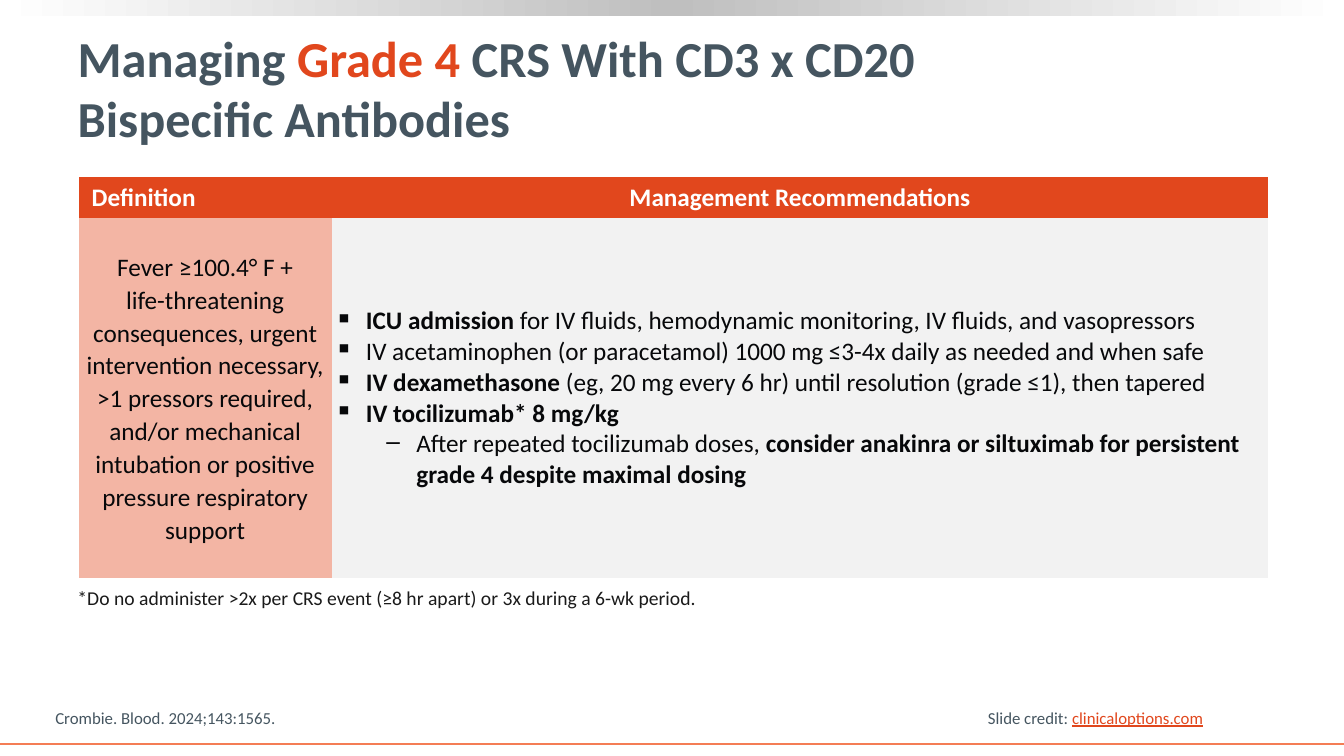
from copy import deepcopy
from dataclasses import dataclass

from lxml import etree
from pptx import Presentation
from pptx.dml.color import RGBColor
from pptx.enum.shapes import MSO_CONNECTOR, MSO_SHAPE
from pptx.enum.text import MSO_ANCHOR, PP_ALIGN
from pptx.oxml.ns import qn
from pptx.util import Inches, Pt

LEFT, CENTER = PP_ALIGN.LEFT, PP_ALIGN.CENTER
TOP, MIDDLE, BOTTOM = MSO_ANCHOR.TOP, MSO_ANCHOR.MIDDLE, MSO_ANCHOR.BOTTOM
RECTANGLE, STRAIGHT = MSO_SHAPE.RECTANGLE, MSO_CONNECTOR.STRAIGHT
TITLE_ONLY = 5
NO_STYLE_NO_GRID = "{2D5ABB26-0587-4C30-8999-92F81FD0307C}"


@dataclass(frozen=True)
class Theme:
    font: str = "Calibri"
    slate: str = "455560"
    accent: str = "E1471D"
    rule: str = "F47D55"
    white: str = "FFFFFF"
    silver: str = "BFBFBF"
    ink: str = "07080A"
    note: str = "1A1A1A"
    definition_fill: str = "F3B5A4"
    advice_fill: str = "F2F2F2"
    title_pt: int = 36
    table_pt: int = 18
    note_pt: int = 14
    footer_pt: int = 12


THEME = Theme()


@dataclass(frozen=True)
class Span:
    text: str
    color: str
    bold: bool = False
    underline: bool = False


@dataclass(frozen=True)
class Para:
    spans: tuple[Span, ...]
    align: PP_ALIGN = LEFT
    line_spacing: float = 1.0
    bullet: str = ""
    indent: float = 0
    level: int = 0


@dataclass(frozen=True)
class Cell:
    paras: tuple[Para, ...]
    fill: str
    inset_x: float
    inset_y: float


@dataclass(frozen=True)
class Label:
    spans: tuple[Span, ...]
    box: tuple[float, float, float, float]
    size: int
    anchor: MSO_ANCHOR = TOP
    wrap: bool = True


def header(text: str, align: PP_ALIGN) -> Cell:
    return Cell((Para((Span(text, THEME.white, True),), align),), THEME.accent, 0.13, 0.05)


def definition(text: str) -> Para:
    return Para((Span(text, THEME.ink),), CENTER, 1.07)


def advice(*parts: tuple[str, bool], bullet: str = "▪", indent: float = 0.31,
           level: int = 0) -> Para:
    spans = tuple(Span(text, THEME.ink, bold) for text, bold in parts)
    return Para(spans, bullet=bullet, indent=indent, level=level)


TITLE = (
    (Span("Managing ", THEME.slate, True), Span("Grade 4", THEME.accent, True),
     Span(" CRS With CD3 x CD20 ", THEME.slate, True)),
    (Span("Bispecific Antibodies", THEME.slate, True),),
)

COLUMNS = (2.51, 9.29)
ROWS = (0.4, 3.57)
CELLS = (
    (header("Definition", LEFT), header("Management Recommendations", CENTER)),
    (
        Cell((
            definition("Fever ≥100.4° F +"),
            definition("life-threatening consequences, urgent intervention necessary, "
                       ">1 pressors required, and/or mechanical intubation or positive "
                       "pressure respiratory support"),
        ), THEME.definition_fill, 0.03, 0),
        Cell((
            advice(("ICU admission ", True),
                   ("for IV fluids, hemodynamic monitoring, IV fluids, and vasopressors", False)),
            advice(("IV acetaminophen (or paracetamol) 1000 mg ≤3-4x daily as needed "
                    "and when safe", False)),
            advice(("IV dexamethasone ", True),
                   ("(eg, 20 mg every 6 hr) until resolution (grade ≤1), then tapered", False)),
            advice(("IV tocilizumab* 8 mg/kg", True)),
            advice(("After repeated tocilizumab doses, ", False),
                   ("consider anakinra or siltuximab for persistent grade 4 despite "
                    "maximal dosing", True), bullet="‒", indent=0.81, level=1),
        ), THEME.advice_fill, 0.03, 0),
    ),
)

LABELS = (
    Label((Span("*Do no administer >2x per CRS event (≥8 hr apart) or 3x during a 6-wk period.",
                THEME.note),), (0.67, 5.76, 11.6, 0.34), THEME.note_pt),
    Label((Span("Crombie. Blood. 2024;143:1565.", THEME.slate),),
          (0.45, 6.97, 8.59, 0.3), THEME.footer_pt, BOTTOM),
    Label((Span("Slide credit: ", THEME.slate),
           Span("clinicaloptions.com", THEME.accent, underline=True)),
          (9.7, 6.97, 2.36, 0.3), THEME.footer_pt, wrap=False),
)


def rgb(color: str) -> RGBColor:
    return RGBColor.from_string(color)


def add_spans(p, spans: tuple[Span, ...], size: int) -> None:
    for span in spans:
        r = p.add_run()
        r.text = span.text
        r.font.name, r.font.size = THEME.font, Pt(size)
        r.font.bold, r.font.underline = span.bold, span.underline
        r.font.color.rgb = rgb(span.color)


def add_bullet(p, para: Para) -> None:
    pPr = p._p.get_or_add_pPr()
    pPr.set("marL", str(Inches(para.indent)))
    pPr.set("indent", str(Inches(-0.31)))
    etree.SubElement(pPr, qn("a:buChar")).set("char", para.bullet)


def add_top_band(slide) -> None:
    """Draw the strip that fades from white to silver and back."""
    sp = slide.shapes.add_shape(RECTANGLE, 0, 0, Inches(13.33), Inches(0.16))
    sp.shadow.inherit = False
    sp.line.fill.background()
    sp.fill.gradient()
    sp.fill.gradient_angle = 0
    stops = sp._element.spPr.find(qn("a:gradFill")).find(qn("a:gsLst"))
    stops.append(deepcopy(stops[0]))
    colors = (THEME.white, THEME.silver, THEME.white)
    for stop, color, position in zip(sp.fill.gradient_stops, colors, (0, 0.5, 1)):
        stop.color.rgb = rgb(color)
        stop.position = position


def add_bottom_rule(slide) -> None:
    y = Inches(7.38)
    line = slide.shapes.add_connector(STRAIGHT, 0, y, Inches(13.33), y)
    line.line.color.rgb = rgb(THEME.rule)
    line.line.width = Pt(1.5)
    etree.SubElement(line._element.spPr, qn("a:effectLst"))


def add_title(slide) -> None:
    sp = slide.shapes.title
    sp.left, sp.top, sp.width, sp.height = map(Inches, (0.67, 0.26, 11.89, 1.21))
    tf = sp.text_frame
    tf.vertical_anchor = MIDDLE
    p = tf.paragraphs[0]
    p.alignment = LEFT
    for i, spans in enumerate(TITLE):
        if i:
            p.add_line_break()
        add_spans(p, spans, THEME.title_pt)


def fill_cell(target, cell: Cell) -> None:
    target.fill.solid()
    target.fill.fore_color.rgb = rgb(cell.fill)
    target.vertical_anchor = MIDDLE
    target.margin_left = target.margin_right = Inches(cell.inset_x)
    target.margin_top = target.margin_bottom = Inches(cell.inset_y)
    tf = target.text_frame
    for i, para in enumerate(cell.paras):
        p = tf.add_paragraph() if i else tf.paragraphs[0]
        p.alignment, p.level = para.align, para.level
        p.line_spacing = para.line_spacing
        if para.bullet:
            add_bullet(p, para)
        add_spans(p, para.spans, THEME.table_pt)


def add_management_table(slide) -> None:
    box = map(Inches, (0.78, 1.76, sum(COLUMNS), sum(ROWS)))
    table = slide.shapes.add_table(len(ROWS), len(COLUMNS), *box).table
    table._tbl.tblPr.find(qn("a:tableStyleId")).text = NO_STYLE_NO_GRID
    table.horz_banding = False
    for column, width in zip(table.columns, COLUMNS):
        column.width = Inches(width)
    for row, height, cells in zip(table.rows, ROWS, CELLS):
        row.height = Inches(height)
        for target, cell in zip(row.cells, cells):
            fill_cell(target, cell)


def add_label(slide, label: Label) -> None:
    tf = slide.shapes.add_textbox(*map(Inches, label.box)).text_frame
    tf.word_wrap = label.wrap
    tf.vertical_anchor = label.anchor
    add_spans(tf.paragraphs[0], label.spans, label.size)


def main() -> None:
    prs = Presentation()
    prs.slide_width, prs.slide_height = Inches(13.33), Inches(7.5)
    slide = prs.slides.add_slide(prs.slide_layouts[TITLE_ONLY])
    add_top_band(slide)
    add_bottom_rule(slide)
    add_title(slide)
    add_management_table(slide)
    for label in LABELS:
        add_label(slide, label)
    prs.save("out.pptx")


if __name__ == "__main__":
    main()
